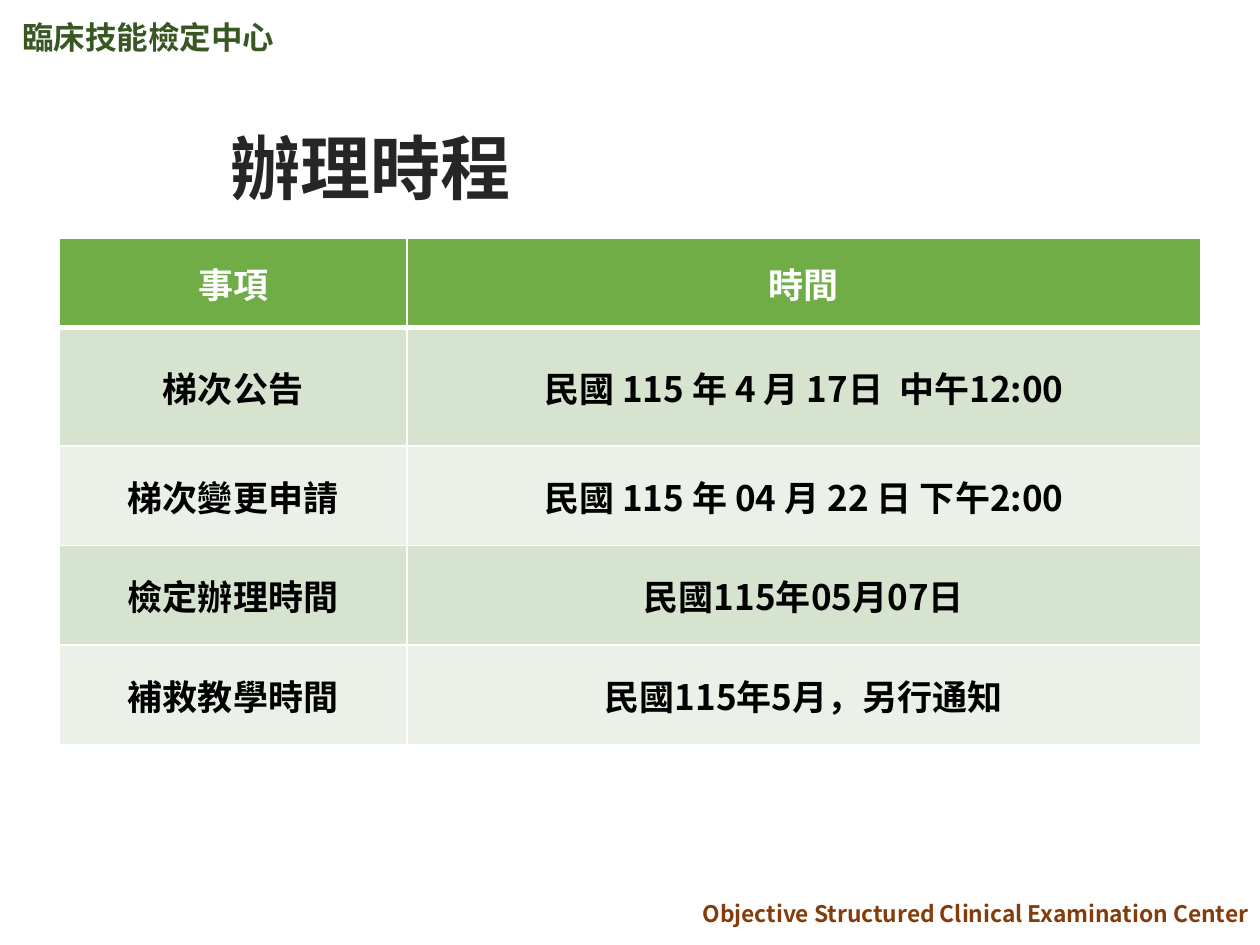
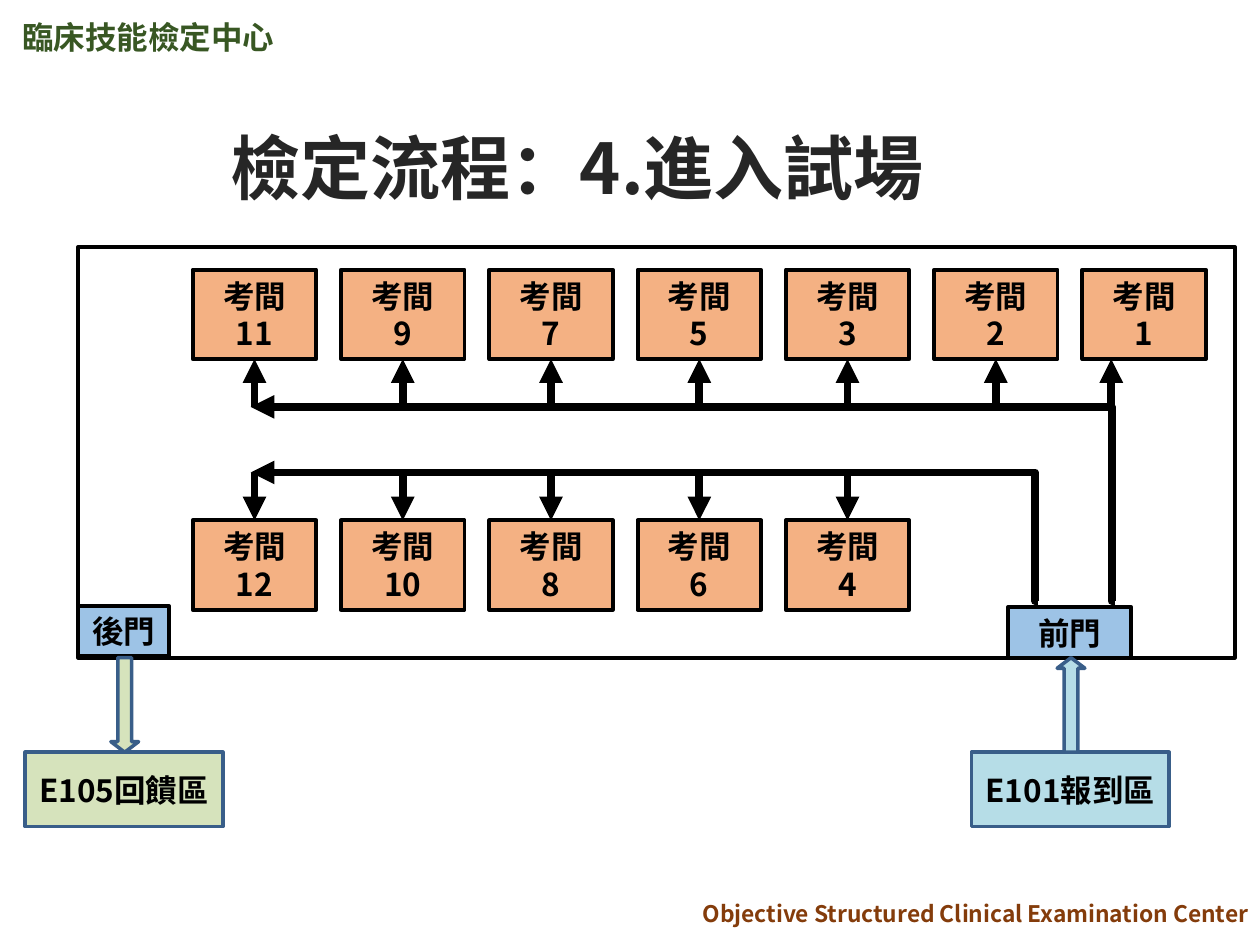
from lxml.etree import SubElement
from pptx import Presentation
from pptx.dml.color import RGBColor
from pptx.enum.shapes import MSO_CONNECTOR, MSO_SHAPE
from pptx.enum.text import MSO_ANCHOR, PP_ALIGN
from pptx.oxml.ns import qn
from pptx.util import Inches, Pt

FONT = "Noto Sans CJK SC"
BLACK = RGBColor(0x00, 0x00, 0x00)
WHITE = RGBColor(0xFF, 0xFF, 0xFF)
TITLE_GRAY = RGBColor(0x26, 0x26, 0x26)
CENTER_GREEN = RGBColor(0x38, 0x57, 0x23)
FOOTER_BROWN = RGBColor(0x84, 0x3C, 0x0B)
HEADER_GREEN = RGBColor(0x70, 0xAD, 0x47)
BAND_DARK = RGBColor(0xD5, 0xE3, 0xCF)
BAND_LIGHT = RGBColor(0xEB, 0xF1, 0xE9)
ROOM_ORANGE = RGBColor(0xF4, 0xB1, 0x83)
DOOR_BLUE = RGBColor(0x9D, 0xC3, 0xE6)
CHECK_IN_BLUE = RGBColor(0xB6, 0xDD, 0xE7)
FEEDBACK_GREEN = RGBColor(0xD6, 0xE3, 0xBC)
AREA_EDGE = RGBColor(0x39, 0x5E, 0x89)


def write_text(frame, text, size=18, color=BLACK, align=PP_ALIGN.CENTER, wrap=True, spacing=None):
    """Fill a text frame with bold text, one paragraph per line."""
    frame.word_wrap = wrap
    for index, line in enumerate(text.split("\n")):
        para = frame.add_paragraph() if index else frame.paragraphs[0]
        para.alignment = align
        para.line_spacing = spacing
        span = para.add_run()
        span.text = line
        span.font.name = FONT
        span.font.size = Pt(size)
        span.font.bold = True
        span.font.color.rgb = color
        SubElement(span.font._element, qn("a:ea"), typeface=FONT)


def add_block(page, bounds, fill=None, edge=BLACK, edge_width=2.25, text=None,
              kind=MSO_SHAPE.RECTANGLE):
    block = page.shapes.add_shape(kind, *map(Inches, bounds))
    block.shadow.inherit = False
    if fill is None:
        block.fill.background()
    else:
        block.fill.solid()
        block.fill.fore_color.rgb = fill
    block.line.color.rgb = edge
    block.line.width = Pt(edge_width)
    if text:
        block.text_frame.vertical_anchor = MSO_ANCHOR.MIDDLE
        write_text(block.text_frame, text)
    return block


deck = Presentation()
deck.slide_width = Inches(10)
deck.slide_height = Inches(7.5)

# Title, centre name and footer on every slide
pages = []
for title in ("辦理時程", "檢定流程：4.進入試場"):
    page = deck.slides.add_slide(deck.slide_layouts[6])
    pages.append(page)
    for text, bounds, style in (
        ("Objective Structured Clinical Examination Center", (4.59, 7.09, 5.41, 0.32),
         dict(size=13, color=FOOTER_BROWN, align=PP_ALIGN.RIGHT)),
        ("臨床技能檢定中心", (0.08, 0.09, 2.22, 0.4),
         dict(size=18, color=CENTER_GREEN, align=PP_ALIGN.LEFT, wrap=False)),
        (title, (1.73, 0.95, 7.7, 0.83),
         dict(size=40, color=TITLE_GRAY, align=PP_ALIGN.LEFT, spacing=0.9)),
    ):
        box = page.shapes.add_textbox(*map(Inches, bounds))
        box.text_frame.vertical_anchor = MSO_ANCHOR.MIDDLE
        write_text(box.text_frame, text, **style)
schedule_page, route_page = pages

# Schedule table
SCHEDULE = (
    ("事項", "時間"),
    ("梯次公告", "民國 115 年 4 月 17日  中午12:00"),
    ("梯次變更申請", "民國 115 年 04 月 22 日 下午2:00"),
    ("檢定辦理時間", "民國115年05月07日"),
    ("補救教學時間", "民國115年5月，另行通知"),
)
table = schedule_page.shapes.add_table(
    5, 2, Inches(0.47), Inches(1.89), Inches(9.06), Inches(4.02)).table
for column, width in zip(table.columns, (2.76, 6.3)):
    column.width = Inches(width)
for row, height in zip(table.rows, (0.71, 0.94, 0.79, 0.79, 0.79)):
    row.height = Inches(height)

for row_index, entries in enumerate(SCHEDULE):
    is_header = row_index == 0
    band = HEADER_GREEN if is_header else (BAND_LIGHT, BAND_DARK)[row_index % 2]
    for column_index, text in enumerate(entries):
        cell = table.cell(row_index, column_index)
        cell.vertical_anchor = MSO_ANCHOR.MIDDLE
        write_text(cell.text_frame, text, size=20, color=WHITE if is_header else BLACK)
        for side in "LRTB":
            under_header = (row_index, side) in ((0, "B"), (1, "T"))
            border = SubElement(cell._tc.get_or_add_tcPr(), qn(f"a:ln{side}"),
                                w=str(Pt(3 if under_header else 1)))
            SubElement(SubElement(border, qn("a:solidFill")), qn("a:srgbClr"), val=str(WHITE))
        cell.fill.solid()
        cell.fill.fore_color.rgb = band

# Exam rooms in two facing rows
ROOM_LEFT, ROOM_WIDTH, ROOM_HEIGHT = 1.53, 0.98, 0.71
ROOM_STEP = (8.59 - ROOM_LEFT) / 6
UPPER_TOP, LOWER_TOP = 2.14, 4.13
UPPER_AISLE, LOWER_AISLE = 3.23, 3.75
UPPER_ROOMS = (11, 9, 7, 5, 3, 2, 1)
LOWER_ROOMS = (12, 10, 8, 6, 4)
AISLE_END = 1.99
FRONT_DOOR_LANE = 8.82

straight_routes = []
for rooms, top, aisle, door_side in (
    (UPPER_ROOMS, UPPER_TOP, UPPER_AISLE, UPPER_TOP + ROOM_HEIGHT),
    (LOWER_ROOMS, LOWER_TOP, LOWER_AISLE, LOWER_TOP),
):
    for index, room in enumerate(rooms):
        left = ROOM_LEFT + index * ROOM_STEP
        add_block(route_page, (left, top, ROOM_WIDTH, ROOM_HEIGHT), ROOM_ORANGE,
                  text=f"考間\n{room}")
        lane = FRONT_DOOR_LANE if room == 1 else left + ROOM_WIDTH / 2
        straight_routes.append((lane, aisle, lane, door_side))

# Doors, hall outline, and the areas outside
add_block(route_page, (0.62, 4.81, 0.72, 0.4), DOOR_BLUE, text="後門")
add_block(route_page, (8, 4.82, 0.98, 0.4), DOOR_BLUE, text="前門")
add_block(route_page, (0.62, 1.96, 9.18, 3.26))
for text, left, arrow_left, fill, arrow_kind in (
    ("E101報到區", 7.71, 8.39, CHECK_IN_BLUE, MSO_SHAPE.UP_ARROW),
    ("E105回饋區", 0.2, 0.88, FEEDBACK_GREEN, MSO_SHAPE.DOWN_ARROW),
):
    add_block(route_page, (left, 5.97, 1.57, 0.59), fill, AREA_EDGE, 2, text)
    arrow = add_block(route_page, (arrow_left, 5.22, 0.22, 0.75), fill, AREA_EDGE, 2,
                      kind=arrow_kind)
    arrow.adjustments[0] = 0.5
    arrow.adjustments[1] = 0.38

# Walking routes from the front door
bent_routes = [
    (8.85, 4.77, AISLE_END, UPPER_AISLE),
    (8.24, 4.77, AISLE_END, LOWER_AISLE),
]
for kind, routes in ((MSO_CONNECTOR.ELBOW, bent_routes),
                     (MSO_CONNECTOR.STRAIGHT, straight_routes)):
    for route in routes:
        connector = route_page.shapes.add_connector(kind, *map(Inches, route))
        connector.line.color.rgb = BLACK
        connector.line.width = Pt(4.5)
        SubElement(connector.line._get_or_add_ln(), qn("a:tailEnd"), type="triangle")
        properties = connector._element.spPr
        SubElement(properties, qn("a:effectLst"))
        if kind == MSO_CONNECTOR.ELBOW:
            guides = properties.find(qn("a:prstGeom")).find(qn("a:avLst"))
            SubElement(guides, qn("a:gd"), name="adj1", fmla="val 450")

deck.save("out.pptx")
